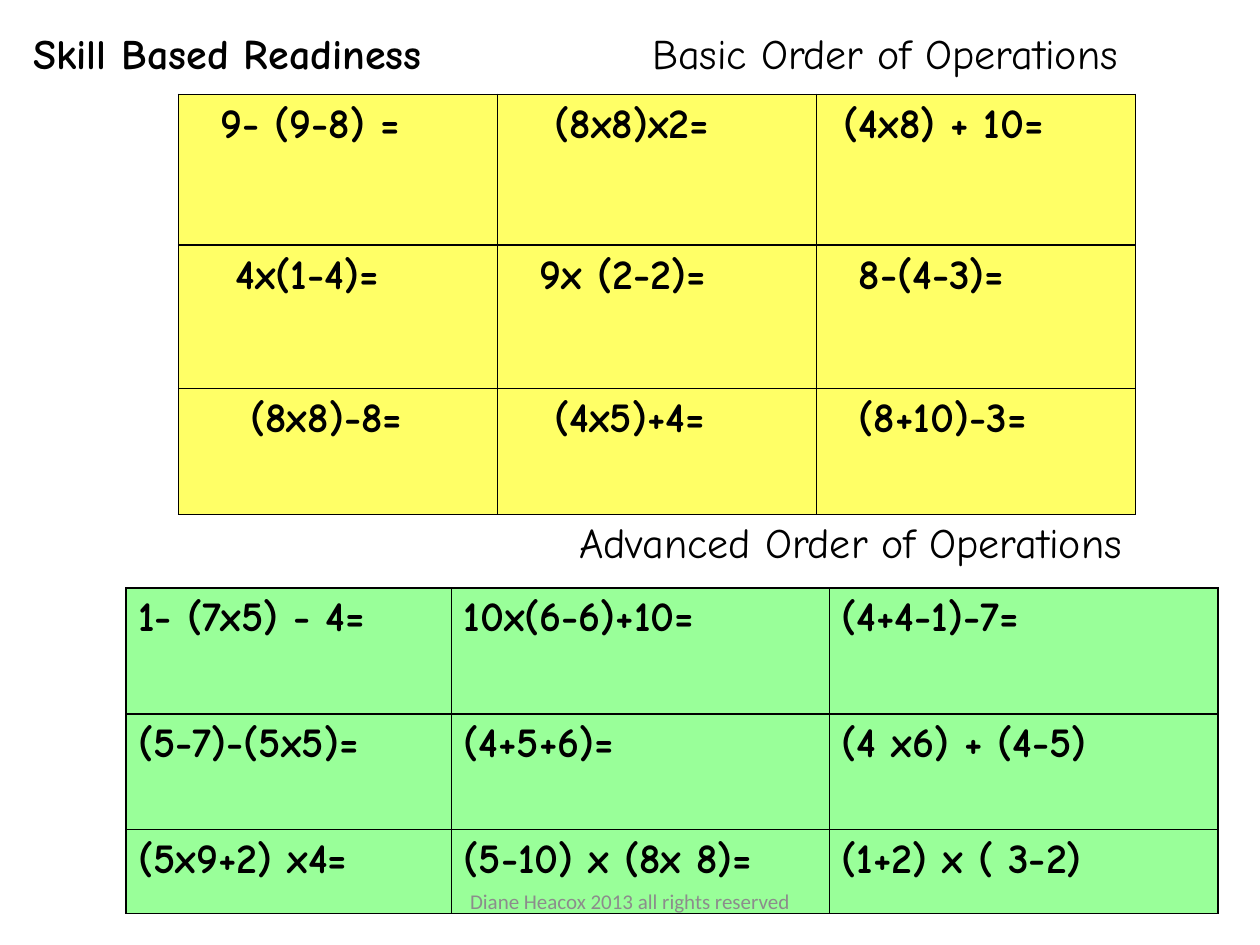
from lxml import etree
from pptx import Presentation
from pptx.dml import color as dml
from pptx.enum import text as t
from pptx.oxml import ns
from pptx.util import Cm, Pt

HAND_FONT = "Comic Neue"
SPACE = 0.3  # indent step of the basic problems, in cm

# Each basic problem has its indent in steps
BASIC = [
    [(2, "9- (9-8) ="), (3, "(8x8)x2="), (1, "(4x8) + 10=")],
    [(3, "4x(1-4)="), (2, "9x (2-2)="), (2, "8-(4-3)=")],
    [(4, "(8x8)-8="), (3, "(4x5)+4="), (2, "(8+10)-3=")],
]
ADVANCED = [
    ["1- (7x5) - 4=", "10x(6-6)+10=", "(4+4-1)-7="],
    ["(5-7)-(5x5)=", "(4+5+6)=", "(4 x6) + (4-5)"],
    ["(5x9+2) x4=", "(5-10) x (8x 8)=", "(1+2) x ( 3-2)"],
]


def rgb(value):
    return dml.RGBColor.from_string(value)


def write(paragraph, words, color="000000", **formats):
    run = paragraph.add_run()
    run.text = words
    values = {"name": HAND_FONT, "size": Pt(24), "bold": False, **formats}
    for name, value in values.items():
        setattr(run.font, name, value)
    run.font.color.rgb = rgb(color)


def add_borders(cell):
    properties = cell._tc.get_or_add_tcPr()
    for index, side in enumerate(("lnL", "lnR", "lnT", "lnB")):
        line = etree.Element(ns.qn(f"a:{side}"), w=str(Pt(1)))
        fill = etree.SubElement(line, ns.qn("a:solidFill"))
        etree.SubElement(fill, ns.qn("a:srgbClr"), val="000000")
        properties.insert(index, line)


def add_problem_table(slide, left, top, widths, heights, problems, color):
    frame = slide.shapes.add_table(
        len(heights), len(widths), Cm(left), Cm(top), Cm(sum(widths)), Cm(sum(heights)))
    table = frame.table
    for column, width in zip(table.columns, widths):
        column.width = Cm(width)
    for row, height, row_problems in zip(table.rows, heights, problems):
        row.height = Cm(height)
        for cell, (indent, words) in zip(row.cells, row_problems):
            cell.margin_left = Cm(0.25 + indent * SPACE)
            cell.fill.solid()
            cell.fill.fore_color.rgb = rgb(color)
            add_borders(cell)
            write(cell.text_frame.paragraphs[0], words, bold=True)


def add_label(slide, left, top, width, height, words, frame_formats=None,
              alignment=t.PP_ALIGN.LEFT, **formats):
    box = slide.shapes.add_textbox(Cm(left), Cm(top), Cm(width), Cm(height))
    for name, value in {"word_wrap": True, **(frame_formats or {})}.items():
        setattr(box.text_frame, name, value)
    paragraph = box.text_frame.paragraphs[0]
    paragraph.alignment = alignment
    write(paragraph, words, **formats)


def main():
    presentation = Presentation()
    presentation.slide_width, presentation.slide_height = Cm(25.4), Cm(19.05)
    slide = presentation.slides.add_slide(presentation.slide_layouts[6])

    # Problem tables
    add_problem_table(slide, 3.6, 1.9, [6.43] * 3, [3.04, 2.89, 2.54], BASIC, "FFFF66")
    advanced = [[(0, words) for words in row] for row in ADVANCED]
    add_problem_table(slide, 2.54, 11.85, [6.56, 7.62, 7.83], [2.54, 2.33, 1.69],
                      advanced, "99FF99")

    # Headings
    add_label(slide, 12.9, 0.42, 12.5, 1.3, "Basic Order of Operations")
    add_label(slide, 11.43, 10.29, 13.34, 1.3, "Advanced Order of Operations")
    add_label(slide, 0.42, 0.42, 9.53, 1.3, "Skill Based Readiness", bold=True)

    # Footer
    add_label(slide, 8.68, 17.66, 8.04, 1.01, "Diane Heacox 2013 all rights reserved",
              {"vertical_anchor": t.MSO_ANCHOR.MIDDLE}, t.PP_ALIGN.CENTER,
              color="8C8C8C", name="Calibri", size=Pt(12))

    presentation.save("out.pptx")


if __name__ == "__main__":
    main()
